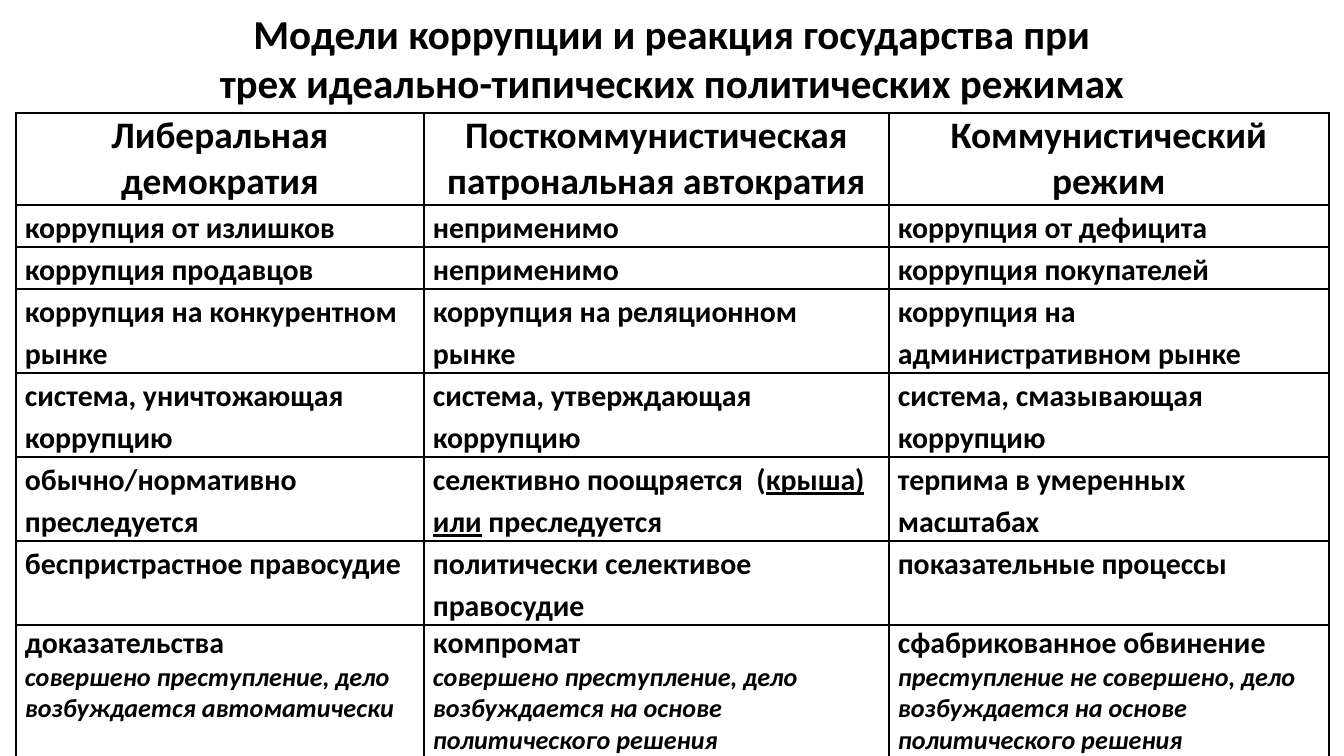
"""Build a slide with a table comparing corruption in three ideal-type regimes."""
from dataclasses import dataclass

from lxml.etree import SubElement
from pptx import Presentation
from pptx.dml.color import RGBColor
from pptx.enum.text import MSO_ANCHOR, PP_ALIGN
from pptx.oxml.ns import qn
from pptx.util import Emu, Pt

EMU_PER_PX = 9144000 / 1344


@dataclass(frozen=True)
class Theme:
    font: str = "Calibri"
    ink: str = "000000"
    title: int = 22
    header: int = 20
    body: int = 16
    note: int = 14
    border: int = 1


@dataclass(frozen=True)
class Run:
    text: str
    size: int
    italic: bool = False
    underline: bool = False


@dataclass(frozen=True)
class Para:
    runs: tuple[Run, ...]
    align: PP_ALIGN = PP_ALIGN.LEFT
    spacing: float = 1.0


THEME = Theme()
COLS = (408, 465, 440)
ROWS = (92, 42, 42, 84, 84, 84, 84, 136)
TITLE = "Модели коррупции и реакция государства при\vтрех идеально-типических политических рeжимах"
HEADERS = (
    "Либеральная демократия",
    "Посткоммунистическая пaтрoнaльная aвтокрaтия",
    "Коммунистический режим",
)
BODY = (
    ("коррупция oт излишков", "неприменимо", "коррупция от дефицита"),
    ("коррупция продавцов", "неприменимо", "коррупция покупателей"),
    ("коррупция на конкурентном рынке", "коррупция на реляционном рынке",
     "коррупция на административном рынке"),
    ("система, уничтожающая коррупцию", "система, утверждающая коррупцию",
     "система, смазывающая коррупцию"),
    ("обычно/нормативно преследуется",
     ("селективно поощряется  (", "крыша) или", " преследуется"),
     "терпима в умеренных масштабах"),
    ("беспристрастное правосудие", "политически селективое правосудие",
     "показательные процессы"),
)
EVIDENCE = (
    ("доказательства", "совершено преступление, дело возбуждается aвтоматически"),
    ("кoмпрoмaт",
     "совершено преступление, дело возбуждается на основе политического решения"),
    ("сфабрикованное обвинение",
     "преступление не совершено, дело возбуждается на основе политического решения"),
)


def px(n: int) -> Emu:
    return Emu(round(n * EMU_PER_PX))


def heading(text: str, size: int) -> list[Para]:
    return [Para((Run(text, size),), PP_ALIGN.CENTER)]


def body(content: str | tuple[str, ...]) -> list[Para]:
    parts = (content,) if isinstance(content, str) else content
    runs = tuple(Run(t, THEME.body, underline=i == 1) for i, t in enumerate(parts))
    return [Para(runs, spacing=1.15)]


def evidence(term: str, note: str) -> list[Para]:
    return [Para((Run(term, THEME.body),)), Para((Run(note, THEME.note, italic=True),))]


def write(tf, paras: list[Para]) -> None:
    for i, para in enumerate(paras):
        p = tf.add_paragraph() if i else tf.paragraphs[0]
        p.alignment, p.line_spacing = para.align, para.spacing
        for run in para.runs:
            for j, line in enumerate(run.text.split("\v")):
                if j:
                    p.add_line_break()
                r = p.add_run()
                r.text = line
                fmt = {"name": THEME.font, "size": Pt(run.size), "bold": True,
                       "italic": run.italic, "underline": run.underline}
                for key, value in fmt.items():
                    setattr(r.font, key, value)
                r.font.color.rgb = RGBColor.from_string(THEME.ink)


def add_borders(cell) -> None:
    tc_pr = cell._tc.get_or_add_tcPr()
    for i, side in enumerate(("lnL", "lnR", "lnT", "lnB")):
        ln = tc_pr.makeelement(qn(f"a:{side}"), {"w": str(Pt(THEME.border))})
        fill = SubElement(ln, qn("a:solidFill"))
        SubElement(fill, qn("a:srgbClr"), val=THEME.ink)
        tc_pr.insert(i, ln)


def add_title(s) -> None:
    tf = s.shapes.add_textbox(px(67), px(11), px(1210), px(93)).text_frame
    fmt = {"word_wrap": True, "vertical_anchor": MSO_ANCHOR.MIDDLE,
           "margin_top": 0, "margin_bottom": 0}
    for key, value in fmt.items():
        setattr(tf, key, value)
    write(tf, heading(TITLE, THEME.title))


def add_regimes(s, rows: list[list[list[Para]]]) -> None:
    table = s.shapes.add_table(len(ROWS), len(COLS), px(16), px(113),
                               px(sum(COLS)), px(sum(ROWS))).table
    table.first_row = table.horz_banding = False
    for col, width in zip(table.columns, COLS):
        col.width = px(width)
    fmt = {"margin_left": px(9), "margin_right": px(9), "margin_top": 0, "margin_bottom": 0}
    for row, height, contents in zip(table.rows, ROWS, rows):
        row.height = px(height)
        for cell, paras in zip(row.cells, contents):
            for key, value in fmt.items():
                setattr(cell, key, value)
            cell.fill.background()
            add_borders(cell)
            write(cell.text_frame, paras)


def main() -> None:
    prs = Presentation()
    prs.slide_width, prs.slide_height = px(1344), px(756)
    s = prs.slides.add_slide(prs.slide_layouts[6])
    add_title(s)
    add_regimes(s, [
        [heading(text, THEME.header) for text in HEADERS],
        *([body(content) for content in row] for row in BODY),
        [evidence(*pair) for pair in EVIDENCE],
    ])
    prs.save("out.pptx")


if __name__ == "__main__":
    main()
